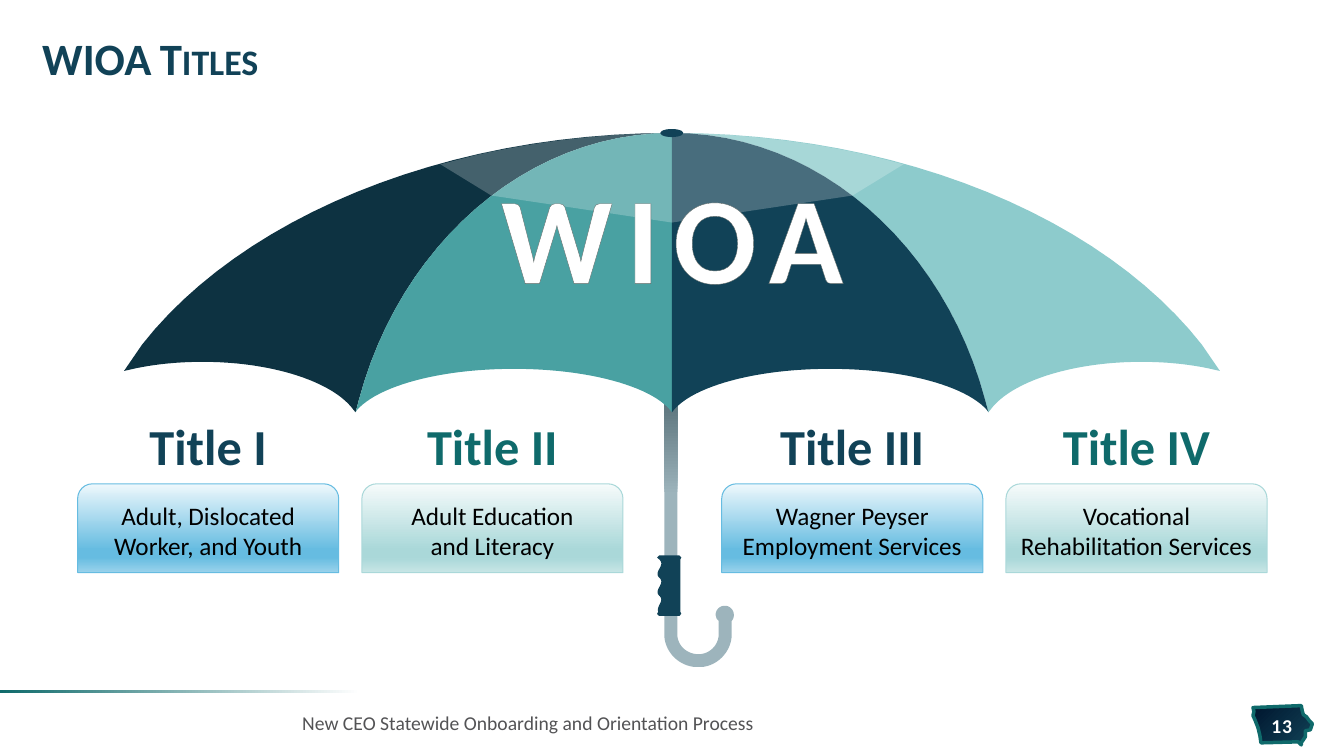
from lxml.etree import SubElement
from pptx import Presentation
from pptx.dml.color import RGBColor
from pptx.enum.shapes import MSO_SHAPE
from pptx.enum.text import MSO_ANCHOR, PP_ALIGN
from pptx.oxml import parse_xml
from pptx.oxml.ns import nsdecls, qn
from pptx.util import Pt

NAVY, TEAL = "114257", "0F6A6B"
MID = 480
BLUE = [(0, "EEF8FC"), (74, "66BCE1"), (83, "66BCE1"), (100, "99D2EB")]
MINT = [(0, "F6FBFB"), (74, "AAD8D9"), (83, "AAD8D9"), (100, "C6E5E5")]
CARDS = [
    (55.44, "Title I", NAVY, BLUE, ["Adult, Dislocated Worker, and Youth"]),
    (258.48, "Title II", TEAL, MINT, ["Adult Education", "and Literacy"]),
    (515.52, "Title III", NAVY, BLUE, ["Wagner Peyser Employment Services"]),
    (718.56, "Title IV", TEAL, MINT, ["Vocational Rehabilitation Services"]),
]

# A pair is a straight step; six numbers are a Bezier curve.
OUTER = [
    (480, 95), (375, 95, 285.6, 175.7, 256.3, 285.8), (254, 294.5), (252.7, 293),
    (238.3, 272.9, 195, 258.5, 144.7, 258.5),
    (125.3, 258.5, 107.3, 260.6, 92.2, 264.2), (88.6, 265), (101.5, 246.2),
    (171.4, 157, 314.6, 95, 480, 95),
]
INNER = [
    (480, 95), (480, 294.5), (478.8, 293),
    (464.4, 275.8, 419.8, 263.5, 367.2, 263.5),
    (313.9, 263.5, 270, 275.8, 254.9, 293), (254, 294.5), (256.3, 285.8),
    (285.6, 175.7, 375, 95, 480, 95),
]
GLOSS = [
    (480, 159), (351, 139.7), (314.6, 117.4), (339.8, 110.9),
    (374.4, 103, 411, 98, 449.3, 95.8), (480, 95),
    (510.7, 95.8), (549, 98, 585.6, 103, 620.2, 110.9),
    (645.4, 117.4), (609, 139.7),
]
POLE = [
    (474.5, 160.6), (483.8, 160.6), (483.8, 452.9),
    (483.8, 460.8, 490.3, 467.3, 499, 467.3),
    (506.9, 467.3, 513.4, 460.8, 513.4, 452.9), (513.4, 443.5), (511.9, 442),
    (511.9, 441.4, 511.2, 439.9, 511.2, 439.2),
    (511.2, 435.6, 514.1, 432.7, 517.7, 432.7),
    (521.3, 432.7, 524.2, 435.6, 524.2, 439.2),
    (524.2, 440.6, 524, 442, 522.7, 443.5), (522.7, 452.9),
    (522.7, 465.8, 511.9, 476.6, 499, 476.6),
    (485.3, 476.6, 474.5, 465.8, 474.5, 452.9),
]
GRIP = [
    (470.9, 396.7), (485.3, 396.7), (486.7, 398.2), (486, 399.6), (486, 437),
    (486.7, 438.5), (485.3, 440), (470.9, 440), (469.4, 438.5), (470.2, 437),
    (468.7, 432.7, 475.2, 429.1, 470.9, 425.5),
    (466.6, 421.2, 475.9, 416.9, 470.9, 412.6),
    (466.6, 408.2, 475.9, 403.9, 470.9, 399.6), (469.4, 398.2),
]
STATE = [
    (895, 505.4), (929.5, 504), (930.2, 507.6), (931, 510.5), (933.1, 511.9),
    (935.3, 514.8), (937.4, 517), (936, 521.3), (932.4, 522), (932.4, 526.3),
    (929.5, 530.6), (929.5, 532.1), (927.4, 529.9), (900.7, 530.6),
    (900, 525.6), (898.6, 519.8), (896.4, 514.1), (895, 511.2), (895.7, 508.3),
]


def color(text):
    """Turn a hex string into a colour."""
    return RGBColor.from_string(text)


def paint(shape, fill, angle=0, line=None, width=0.75):
    """Give a shape a plain or gradient fill, a line and no shadow."""
    shape.shadow.inherit = False
    if isinstance(fill, str):
        shape.fill.solid()
        shape.fill.fore_color.rgb = color(fill)
    else:
        shape.fill.gradient()
        stops = "".join(
            f'<a:gs pos="{pos * 1000}"><a:srgbClr val="{tone}"/></a:gs>'
            for pos, tone in fill)
        props = shape._element.spPr
        props.replace(props.find(qn("a:gradFill")), parse_xml(
            f'<a:gradFill {nsdecls("a")} rotWithShape="1"><a:gsLst>{stops}</a:gsLst>'
            f'<a:lin ang="{angle * 60000}" scaled="0"/></a:gradFill>'))
    if line:
        shape.line.color.rgb = color(line)
        shape.line.width = Pt(width)
    else:
        shape.line.fill.background()
    return shape


def trace(steps, count=24):
    """Turn straight and curved steps into a list of points."""
    pts = [steps[0]]
    for step in steps[1:]:
        if len(step) == 2:
            pts.append(step)
            continue
        ends = [pts[-1], step[:2], step[2:4], step[4:]]
        for i in range(1, count + 1):
            t = i / count
            parts = ((1 - t) ** 3, 3 * t * (1 - t) ** 2, 3 * t * t * (1 - t), t ** 3)
            pts.append(tuple(sum(w * p[k] for w, p in zip(parts, ends)) for k in (0, 1)))
    return pts


def draw(slide, steps, fill, flip=False, **look):
    """Draw a closed outline, mirrored about the pole if asked."""
    pts = [(Pt(2 * MID - x if flip else x), Pt(y)) for x, y in trace(steps)]
    form = slide.shapes.build_freeform(*pts[0], scale=1.0)
    form.add_line_segments(pts[1:], close=True)
    return paint(form.convert_to_shape(), fill, **look)


def block(slide, kind, box, fill, **look):
    """Add a preset shape."""
    shape = slide.shapes.add_shape(kind, *map(Pt, box))
    return paint(shape, fill, **look)


def write(shape, lines, size, tone, bold=False, align=PP_ALIGN.CENTER,
          anchor=MSO_ANCHOR.MIDDLE, inset=(0, 0)):
    """Fill a shape with one paragraph and return its last run."""
    frame = shape.text_frame
    frame.word_wrap = True
    frame.vertical_anchor = anchor
    frame.margin_left = frame.margin_right = Pt(inset[0])
    frame.margin_top = frame.margin_bottom = Pt(inset[1])
    para = frame.paragraphs[0]
    para.alignment = align
    for i, line in enumerate(lines):
        if i:
            para.add_line_break()
        run = para.add_run()
        run.text = line
        font = run.font
        font.name, font.size, font.bold = "Calibri", Pt(size), bold
        font.color.rgb = color(tone)
    return run


def label(slide, box, text, size, tone, **look):
    """Add a text box with one run."""
    return write(slide.shapes.add_textbox(*map(Pt, box)), [text], size, tone, **look)


def card(slide, left, name, tone, fill, lines):
    """Add a title heading and its card."""
    label(slide, (left, 296.64, 186.48, 43.92), name, 36, tone,
          bold=True, anchor=MSO_ANCHOR.TOP)
    shape = block(slide, MSO_SHAPE.ROUND_2_SAME_RECTANGLE,
                  (left, 345.6, 186.48, 63.36), fill, angle=90, line=fill[1][1])
    write(shape, lines, 18, "000000", inset=(6, 3.6))


def shade(slide):
    """Draw the umbrella and its lettering."""
    draw(slide, POLE, [(39, "9DB4BC"), (67, "465E66")], angle=270)
    draw(slide, GRIP, NAVY)
    draw(slide, OUTER, "0D3241")
    draw(slide, INNER, "49A1A2")
    draw(slide, OUTER, "8DCBCC", flip=True)
    draw(slide, INNER, NAVY, flip=True)
    gloss = draw(slide, GLOSS, "FFFFFF")
    tint = gloss._element.spPr.find(".//" + qn("a:srgbClr"))
    SubElement(tint, qn("a:alpha")).set("val", "23000")
    block(slide, MSO_SHAPE.OVAL, (471.6, 92.16, 16.56, 5.76), NAVY)
    run = label(slide, (306.72, 103.68, 347.04, 127.44), "WIOA", 88, "FFFFFF", bold=True)
    props = run._r.get_or_add_rPr()
    props.set("spc", "1000")
    props.insert(0, parse_xml(
        f'<a:ln {nsdecls("a")} w="{Pt(0.8)}"><a:solidFill>'
        '<a:srgbClr val="5F6866"/></a:solidFill></a:ln>'))


def main():
    """Build the slide and save it."""
    deck = Presentation()
    deck.slide_width, deck.slide_height = Pt(960), Pt(540)
    slide = deck.slides.add_slide(deck.slide_layouts[6])
    draw(slide, STATE, [(0, "00162E"), (100, NAVY)], angle=45, line=TEAL, width=2.5)
    block(slide, MSO_SHAPE.RECTANGLE, (0, 493.2, 273.6, 2.16),
          [(6, "FFFFFF"), (100, TEAL)], angle=180)
    title = slide.shapes.add_textbox(Pt(23.04), Pt(17.28), Pt(913.68), Pt(54))
    run = write(title, ["WIOA Titles"], 32, NAVY, bold=True,
                align=PP_ALIGN.LEFT, inset=(7.2, 3.6))
    run._r.get_or_add_rPr().set("cap", "small")
    title.text_frame.paragraphs[0].line_spacing = 0.85
    for item in CARDS:
        card(slide, *item)
    shade(slide)
    label(slide, (208.8, 501.84, 652.32, 28.8),
          "New CEO Statewide Onboarding and Orientation Process", 14, "535355",
          align=PP_ALIGN.LEFT, inset=(7.2, 3.6))
    page = label(slide, (897.12, 509.76, 36.72, 16.56), "13", 14, "FFFFFF",
                 bold=True, inset=(0, 3.6))
    page._r.get_or_add_rPr().set("spc", "50")
    deck.save("out.pptx")


if __name__ == "__main__":
    main()
